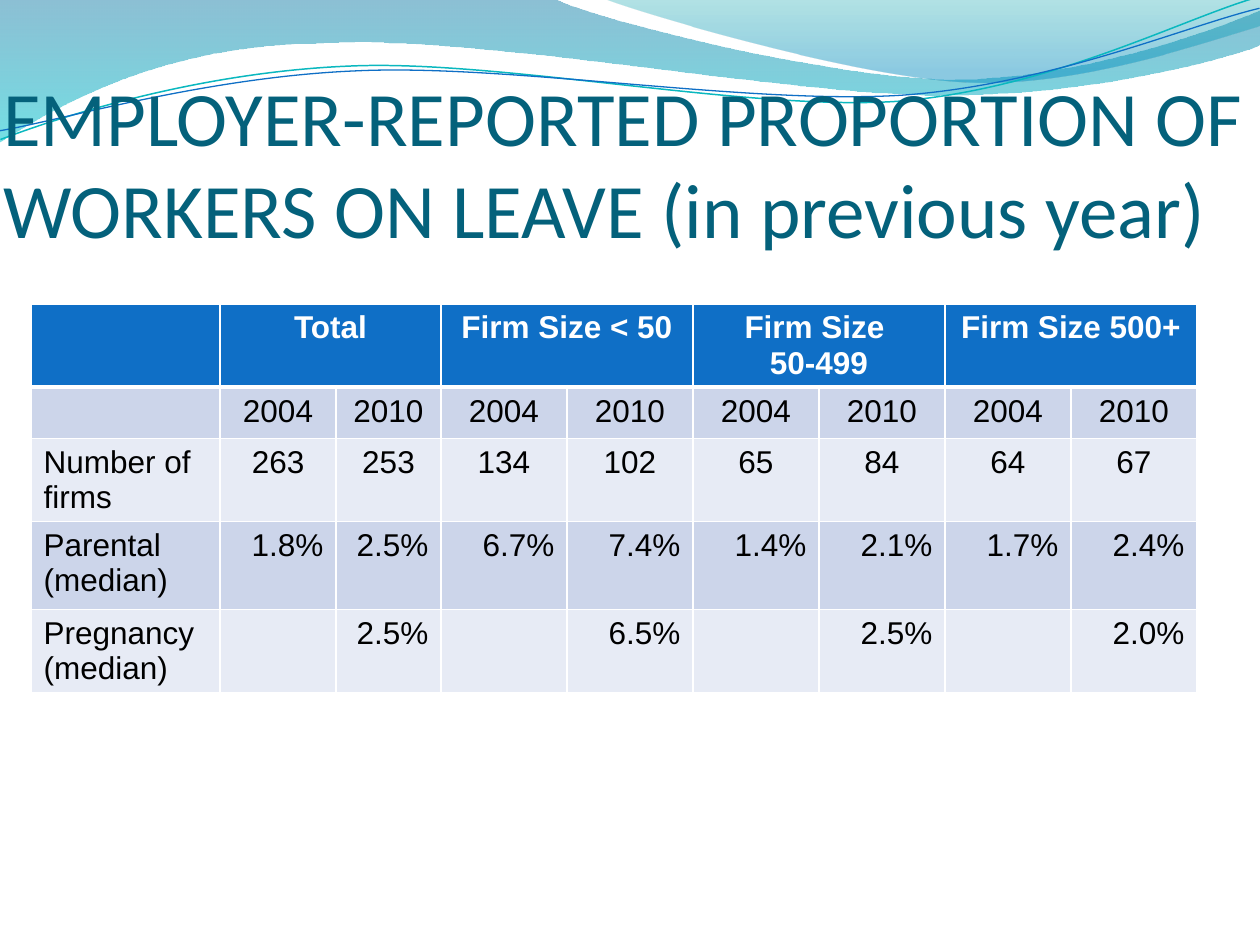
import pptx
import pptx.dml.color
import pptx.enum.text
import pptx.oxml
import pptx.oxml.ns
import pptx.util
from lxml import etree

PX = 914400 / 126
ALIGN = pptx.enum.text.PP_ALIGN
qn = pptx.oxml.ns.qn


def color(code):
    return pptx.dml.color.RGBColor.from_string(code)


def write(frame, text, size=18, font="Arial", fill="000000", bold=False, align=ALIGN.LEFT):
    """Fill a text frame: newline starts a paragraph, vertical tab breaks a line."""
    frame.text = text
    for para in frame.paragraphs:
        para.alignment = align
        for run in para.runs:
            run.font.size = pptx.util.Pt(size)
            run.font.name = font
            run.font.bold = bold
            run.font.color.rgb = color(fill)


deck = pptx.Presentation()
deck.slide_width = round(1260 * PX)
deck.slide_height = round(945 * PX)
slide = deck.slides.add_slide(deck.slide_layouts[5])
shapes = slide.shapes

# Waves: each part is a line end (2 numbers) or a cubic curve (6 numbers).
# Bands have gradient stops (position, colour, alpha %); lines have colour and points.
waves = [
    ([(0, -1), (554, -1), (600, 21, 837, 79, 955, 79), (1075, 79, 1207, 33, 1260, 11),
      (1261, 45), (1239, 55, 1096, 96, 940, 95), (784, 95, 481, 35, 324, 43),
      (163, 44, 58, 105, -1, 142)],
     [(0, "0074A1", 45), (1, "00C6CF", 55)], None),
    ([(604, -1), (641, 14, 859, 78, 969, 82), (1079, 87, 1211, 40, 1260, 26), (1260, 0)],
     [(0, "00A1A9", 30), (0.8, "008BBF", 45)], None),
    ([(-2, 110), (58, 90, 199, 52, 350, 53), (499, 53, 745, 117, 896, 114),
      (1049, 109, 1184, 45, 1260, 27)], None, ("0AB8BF", 0.85)),
    ([(-2, 101), (57, 94, 207, 57, 357, 58), (509, 58, 750, 111, 902, 108),
      (1052, 104, 1188, 52, 1262, 38)], None, ("0F6FC6", 0.75)),
]
for parts, stops, line in waves:
    dots = [(x * PX, y * PX) for part in parts for x, y in zip(part[::2], part[1::2])]
    pen = shapes.build_freeform(*dots[0])
    pen.add_line_segments(dots[1:], close=stops is not None)
    wave = pen.convert_to_shape()
    # Join each run of three points into one cubic curve
    legs = wave._element.iter(qn("a:lnTo"))
    legs = iter(list(legs))
    for part in parts[1:]:
        leg = next(legs)
        if len(part) == 6:
            leg.tag = qn("a:cubicBezTo")
            for extra in (next(legs), next(legs)):
                leg.append(extra[0])
                extra.getparent().remove(extra)
    wave.shadow.inherit = False
    if stops:
        wave.line.fill.background()
        wave.fill.gradient()
        wave.fill.gradient_angle = 270
        for stop, (place, code, _) in zip(wave.fill.gradient_stops, stops):
            stop.position = place
            stop.color.rgb = color(code)
        for node, (_, _, alpha) in zip(wave._element.iter(qn("a:srgbClr")), stops):
            etree.SubElement(node, qn("a:alpha"), val=str(alpha * 1000))
    else:
        wave.rotation = 357.3
        wave.fill.background()
        wave.line.color.rgb = color(line[0])
        wave.line.width = pptx.util.Pt(line[1])

# Title, in front of the waves
title = shapes.title
shapes._spTree.append(title._element)
title.left, title.top, title.width, title.height = [round(v * PX) for v in (-32, 97, 1344, 157)]
frame = title.text_frame
write(frame, "EMPLOYER-REPORTED PROPORTION OF\vWORKERS ON LEAVE (in previous year)",
      size=44, font="Calibri", fill="04617B")
frame.auto_size = pptx.enum.text.MSO_AUTO_SIZE.NONE
frame.word_wrap = True
frame.vertical_anchor = pptx.enum.text.MSO_ANCHOR.BOTTOM
frame.margin_left = round(35 * PX)
frame.margin_top = round(6 * PX)
frame.margin_right = frame.margin_bottom = 0

# Table
heads = ["Total", "Firm Size < 50", "Firm Size \n50-499", "Firm Size 500+"]
rows = [
    [""] + [text for head in heads for text in (head, "")],
    [""] + ["2004", "2010"] * 4,
    ["Number of firms", "263", "253", "134", "102", "65", "84", "64", "67"],
    ["Parental (median)", "1.8%", "2.5%", "6.7%", "7.4%", "1.4%", "2.1%", "1.7%", "2.4%"],
    ["Pregnancy\n(median)", "", "2.5%", "", "6.5%", "", "2.5%", "", "2.0%"],
]
wide = [189, 116, 105] + [126] * 6
high = [82, 51, 83, 88, 83]
fills = ["0F6FC6", "CCD5EA", "E7EBF5", "CCD5EA", "E7EBF5"]
box = [round(v * PX) for v in (31, 304, sum(wide), sum(high))]
table = shapes.add_table(len(rows), len(wide), *box).table
table.horz_banding = False
for col, width in zip(table.columns, wide):
    col.width = round(width * PX)
for row, height in zip(table.rows, high):
    row.height = round(height * PX)
for c in range(1, 9, 2):
    table.cell(0, c).merge(table.cell(0, c + 1))

for r, row in enumerate(rows):
    for c, text in enumerate(row):
        cell = table.cell(r, c)
        if text:
            align = ALIGN.LEFT if c == 0 else ALIGN.CENTER if r < 3 else ALIGN.RIGHT
            write(cell.text_frame, text, fill="000000" if r else "FFFFFF", bold=r == 0, align=align)
        props = cell._tc.get_or_add_tcPr()
        for side in ("lnL", "lnR", "lnT", "lnB"):
            thick = (side == "lnB" and r == 0) or (side == "lnT" and r == 1)
            edge = etree.SubElement(props, qn("a:" + side), w=str(pptx.util.Pt(3 if thick else 1)))
            solid = etree.SubElement(edge, qn("a:solidFill"))
            etree.SubElement(solid, qn("a:srgbClr"), val="FFFFFF")
        cell.fill.solid()
        cell.fill.fore_color.rgb = color(fills[r])

deck.save("out.pptx")
